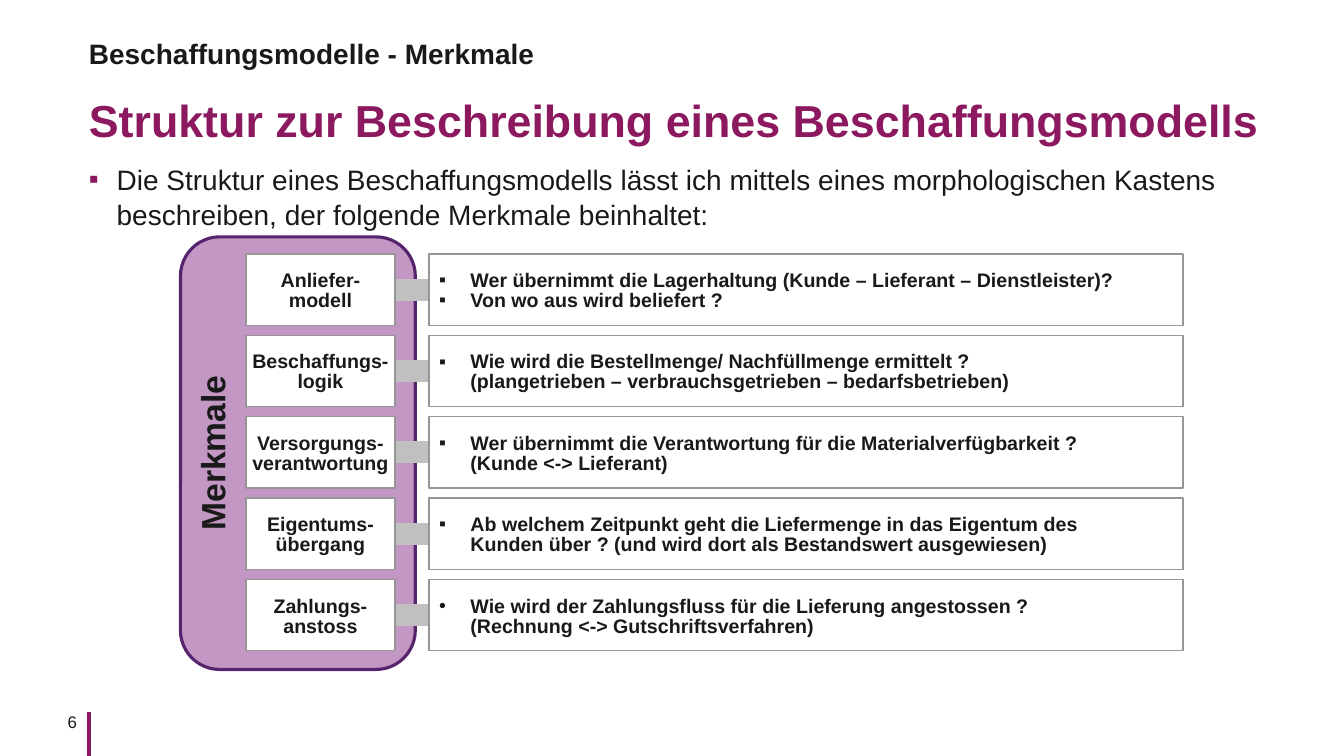
import dataclasses

import lxml.etree
import pptx
import pptx.dml.color
import pptx.enum.shapes
import pptx.enum.text
import pptx.oxml.ns
import pptx.util

Cm = pptx.util.Cm
Pt = pptx.util.Pt
ALIGN = pptx.enum.text.PP_ALIGN
ANCHOR = pptx.enum.text.MSO_ANCHOR
SHAPE = pptx.enum.shapes.MSO_SHAPE
qn = pptx.oxml.ns.qn


@dataclasses.dataclass(frozen=True)
class Theme:
    font: str = "Arial"
    text: str = "191919"
    accent: str = "8C195F"
    panel: str = "C397C4"
    panel_line: str = "55246C"
    box: str = "FFFFFF"
    box_line: str = "969696"
    bar: str = "C0C0C0"
    title_size: int = 32
    panel_size: int = 24
    body_size: int = 20
    box_size: int = 14
    number_size: int = 12


THEME = Theme()

# Feature, its questions and their bullet; \v breaks a line, \n starts a paragraph
FEATURES = [
    ("Anliefer-\vmodell",
     "Wer übernimmt die Lagerhaltung (Kunde – Lieferant – Dienstleister)?\n"
     "Von wo aus wird beliefert ?", "▪"),
    ("Beschaffungs-\vlogik",
     "Wie wird die Bestellmenge/ Nachfüllmenge ermittelt ?\v"
     "(plangetrieben – verbrauchsgetrieben – bedarfsbetrieben)", "▪"),
    ("Versorgungs-\vverantwortung",
     "Wer übernimmt die Verantwortung für die Materialverfügbarkeit ?\v"
     "(Kunde <-> Lieferant)", "▪"),
    ("Eigentums-\vübergang",
     "Ab welchem Zeitpunkt geht die Liefermenge in das Eigentum des\v"
     "Kunden über ? (und wird dort als Bestandswert ausgewiesen)", "▪"),
    ("Zahlungs-\vanstoss",
     "Wie wird der Zahlungsfluss für die Lieferung angestossen ?\v"
     "(Rechnung <-> Gutschriftsverfahren)", "•"),
]
ROWS_TOP, ROW_PITCH, ROW_HEIGHT = 6.4, 2.05, 1.8
BAR_HEIGHT = 0.52


def rgb(color):
    return pptx.dml.color.RGBColor.from_string(color)


def place(shape, left, top, width, height):
    shape.left, shape.top = Cm(left), Cm(top)
    shape.width, shape.height = Cm(width), Cm(height)


def set_bullet(paragraph, character=None, indent=0, color=THEME.text):
    """Give the paragraph a hanging bullet, or none without a character."""
    properties = paragraph._p.get_or_add_pPr()
    properties.set("marL", str(Cm(indent)))
    properties.set("indent", str(-Cm(indent)))
    if character is None:
        lxml.etree.SubElement(properties, qn("a:buNone"))
        return
    bullet_color = lxml.etree.SubElement(properties, qn("a:buClr"))
    lxml.etree.SubElement(bullet_color, qn("a:srgbClr"), val=color)
    lxml.etree.SubElement(properties, qn("a:buFont"), typeface=THEME.font)
    lxml.etree.SubElement(properties, qn("a:buChar"), char=character)


def write(shape, text, size, bold=False, color=THEME.text, align=ALIGN.LEFT,
          anchor=ANCHOR.TOP, spacing=1.0, insets=(0, 0, 0, 0), wrap=True):
    """Fill the shape with formatted text; insets are left, top, right, bottom in cm."""
    frame = shape.text_frame
    frame.text = text
    frame.word_wrap = wrap
    frame.auto_size = pptx.enum.text.MSO_AUTO_SIZE.NONE
    frame.vertical_anchor = anchor
    frame.margin_left, frame.margin_top, frame.margin_right, frame.margin_bottom = map(Cm, insets)
    for paragraph in frame.paragraphs:
        paragraph.alignment = align
        paragraph.line_spacing = spacing
        paragraph.space_before = Pt(0)
        for run in paragraph.runs:
            run.font.name = THEME.font
            run.font.size = Pt(size)
            run.font.bold = bold
            run.font.color.rgb = rgb(color)


def add_box(slide, left, top, width, height, fill, line, line_width=1.0, kind=SHAPE.RECTANGLE):
    shape = slide.shapes.add_shape(kind, Cm(left), Cm(top), Cm(width), Cm(height))
    shape.shadow.inherit = False
    shape.fill.solid()
    shape.fill.fore_color.rgb = rgb(fill)
    shape.line.color.rgb = rgb(line)
    shape.line.width = Pt(line_width)
    return shape


def add_text_box(slide, left, top, width, text, align, wrap):
    """Add one white box of a feature row."""
    shape = add_box(slide, left, top, width, ROW_HEIGHT, THEME.box, THEME.box_line)
    write(shape, text, THEME.box_size, bold=True, align=align, anchor=ANCHOR.MIDDLE,
          spacing=0.85, insets=(0.25, 0.23, 0.25, 0.13), wrap=wrap)
    return shape


def add_feature_row(slide, top, feature, questions, bullet):
    bar_top = top + (ROW_HEIGHT - BAR_HEIGHT) / 2
    add_box(slide, 9.8, bar_top, 1.3, BAR_HEIGHT, THEME.bar, THEME.bar)
    add_text_box(slide, 6.2, top, 3.76, feature, ALIGN.CENTER, wrap=False)
    question_box = add_text_box(slide, 10.82, top, 19, questions, ALIGN.LEFT, wrap=True)
    for paragraph in question_box.text_frame.paragraphs:
        set_bullet(paragraph, bullet, 0.79)


def add_headings(slide):
    title, body, topic = slide.placeholders
    place(title, 2.24, 1.93, 30.7, 1.9)
    write(title, "Struktur zur Beschreibung eines Beschaffungsmodells", THEME.title_size,
          bold=True, color=THEME.accent, anchor=ANCHOR.MIDDLE, spacing=1.2)
    place(body, 2.24, 4.04, 30.7, 13.2)
    write(body, "Die Struktur eines Beschaffungsmodells lässt ich mittels eines morphologischen "
          "Kastens\vbeschreiben, der folgende Merkmale beinhaltet:", THEME.body_size, spacing=1.05)
    set_bullet(body.text_frame.paragraphs[0], "▪", 0.7, THEME.accent)
    place(topic, 2.24, 0.95, 30.7, 0.8)
    write(topic, "Beschaffungsmodelle - Merkmale", THEME.body_size, bold=True,
          anchor=ANCHOR.MIDDLE)
    set_bullet(topic.text_frame.paragraphs[0])


def add_panel(slide):
    panel = add_box(slide, 4.55, 5.97, 5.92, 10.9, THEME.panel, THEME.panel_line, 2.25,
                    SHAPE.ROUNDED_RECTANGLE)
    write(panel, "Merkmale", THEME.panel_size, bold=True, align=ALIGN.CENTER,
          insets=(0, 0.13, 0.25, 0.13))
    panel.text_frame._txBody.bodyPr.set("vert", "vert270")


def add_page_number(slide):
    line = slide.shapes.add_connector(pptx.enum.shapes.MSO_CONNECTOR.STRAIGHT,
                                      Cm(2.24), Cm(17.93), Cm(2.24), Cm(19.05))
    line.line.color.rgb = rgb(THEME.accent)
    line.line.width = Pt(3)
    lxml.etree.SubElement(line._element.spPr, qn("a:effectLst"))
    number = slide.shapes.add_textbox(Cm(0.74), Cm(17.93), Cm(1.5), Cm(0.5))
    write(number, "6", THEME.number_size, align=ALIGN.RIGHT, insets=(0, 0, 0.3, 0))


def main():
    presentation = pptx.Presentation()
    presentation.slide_width, presentation.slide_height = Cm(33.88), Cm(19.05)
    slide = presentation.slides.add_slide(presentation.slide_layouts.get_by_name("Two Content"))
    add_headings(slide)
    add_panel(slide)
    for index, feature_row in enumerate(FEATURES):
        add_feature_row(slide, ROWS_TOP + index * ROW_PITCH, *feature_row)
    add_page_number(slide)
    presentation.save("out.pptx")


if __name__ == "__main__":
    main()
